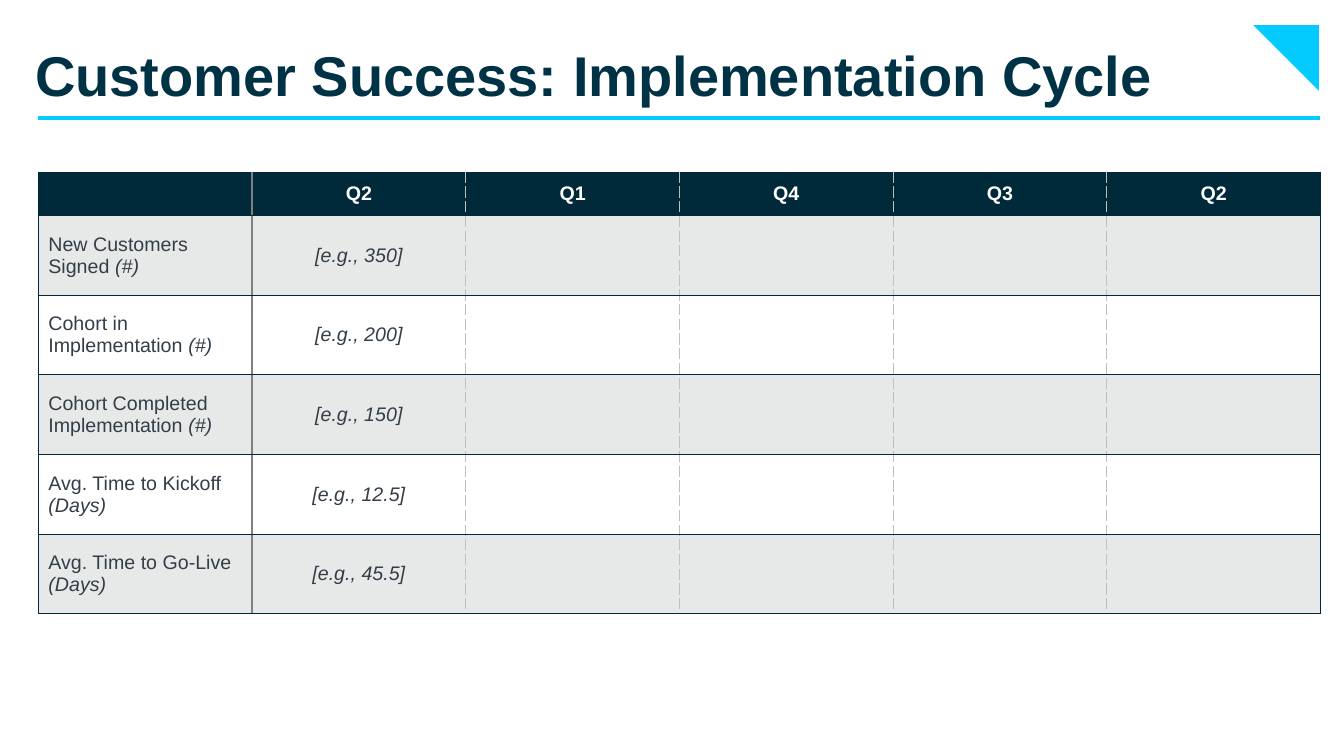
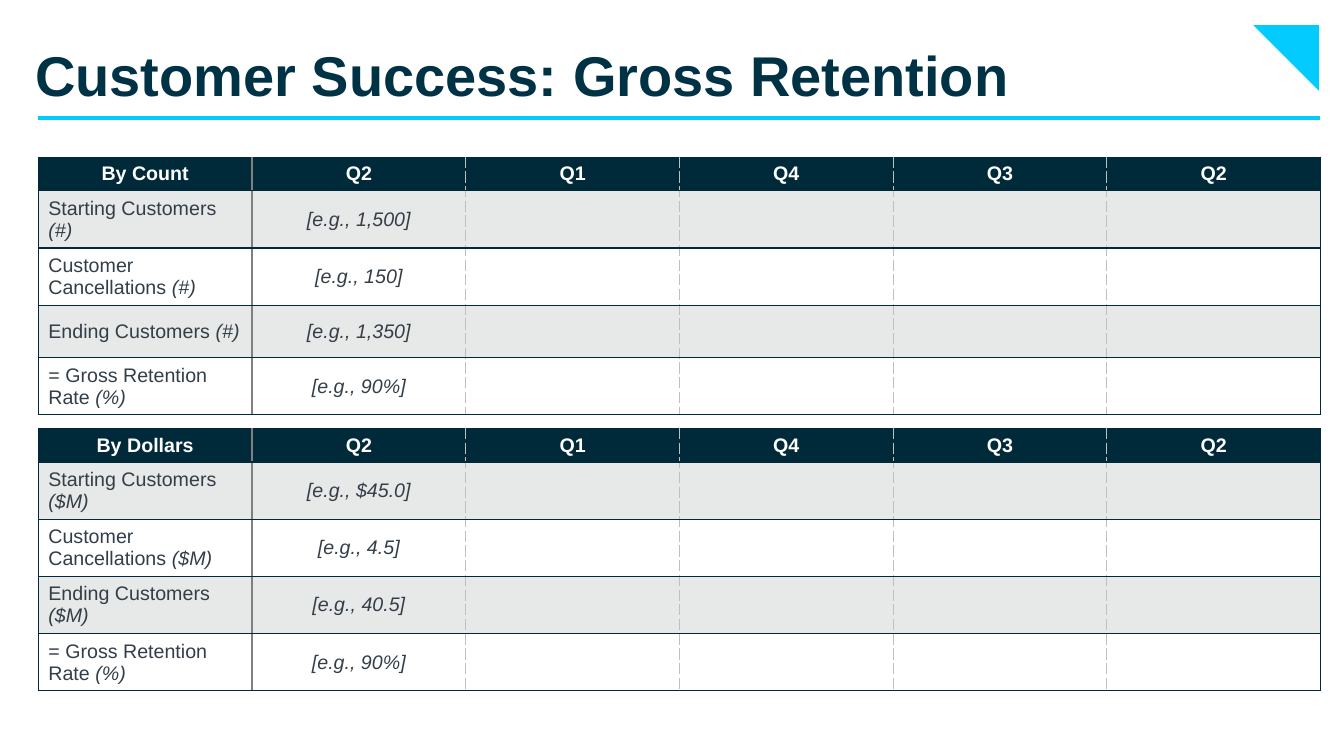
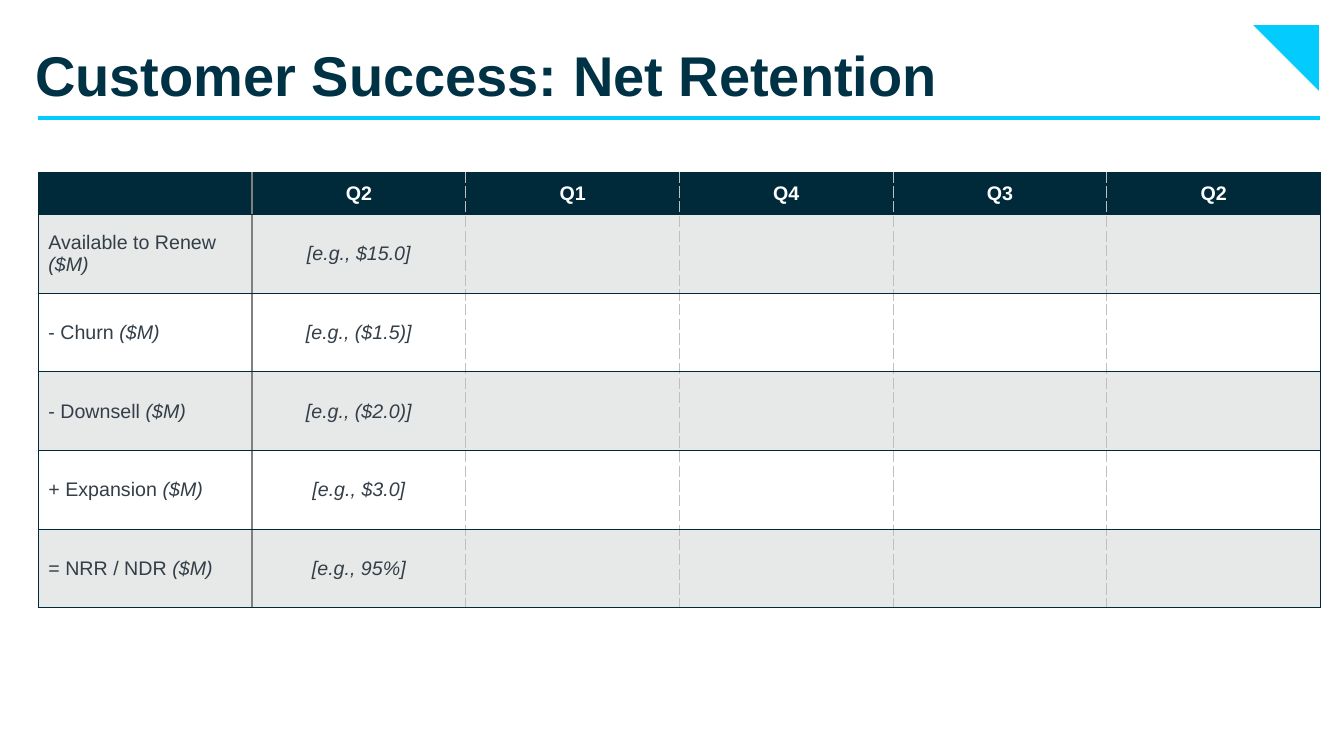
from lxml import etree
from pptx import Presentation
from pptx import util as u
from pptx.dml.color import RGBColor
from pptx.enum import shapes, text
from pptx.oxml import ns

PX = 9144  # 100 px to the inch
FONT = "Arial"
COLORS = {
    "title": "003246",
    "accent": "03CBFD",
    "navy": "002A3A",
    "body": "333E48",
    "white": "FFFFFF",
    "band": "E7E8E8",
    "divider": "808080",
    "dashes": "BFBFBF",
}
LEFT, RIGHT = 38, 1309
COLUMN_WIDTH = 212
QUARTERS = ["Q2", "Q1", "Q4", "Q3", "Q2"]

# Each table: top, header height, row height, corner label, rows (label, unit, example)
SLIDES = [
    ("Customer Success: Implementation Cycle", [
        (171, 43, 79, "", [
            ("New Customers Signed", "(#)", "350"),
            ("Cohort in Implementation", "(#)", "200"),
            ("Cohort Completed Implementation", "(#)", "150"),
            ("Avg. Time to Kickoff", "(Days)", "12.5"),
            ("Avg. Time to Go-Live", "(Days)", "45.5"),
        ]),
    ]),
    ("Customer Success: Gross Retention", [
        (156, 28, 52, "By Count", [
            ("Starting Customers", "(#)", "1,500"),
            ("Customer Cancellations", "(#)", "150"),
            ("Ending Customers", "(#)", "1,350"),
            ("= Gross Retention Rate", "(%)", "90%"),
        ]),
        (425, 28, 52, "By Dollars", [
            ("Starting Customers", "($M)", "$45.0"),
            ("Customer Cancellations", "($M)", "4.5"),
            ("Ending Customers", "($M)", "40.5"),
            ("= Gross Retention Rate", "(%)", "90%"),
        ]),
    ]),
    ("Customer Success: Net Retention", [
        (171, 42, 78, "", [
            ("Available to Renew", "($M)", "$15.0"),
            ("- Churn", "($M)", "($1.5)"),
            ("- Downsell", "($M)", "($2.0)"),
            ("+ Expansion", "($M)", "$3.0"),
            ("= NRR / NDR", "($M)", "95%"),
        ]),
    ]),
]


def style_font(font, size, color, bold=False):
    font.name = FONT
    font.size = u.Pt(size)
    font.bold = bold
    font.color.rgb = RGBColor.from_string(COLORS[color])


def set_borders(cell, left, right):
    """Draw the four cell edges; top and bottom are always navy."""
    properties = cell._tc.get_or_add_tcPr()
    for side, color in (("L", left), ("R", right), ("T", "navy"), ("B", "navy")):
        edge = etree.SubElement(properties, ns.qn("a:ln" + side), w=str(u.Pt(1)))
        fill = etree.SubElement(edge, ns.qn("a:solidFill"))
        etree.SubElement(fill, ns.qn("a:srgbClr"), val=COLORS[color])
        dash = "lgDash" if color == "dashes" else "solid"
        etree.SubElement(edge, ns.qn("a:prstDash"), val=dash)


deck = Presentation()
deck.slide_width, deck.slide_height = 1333 * PX, 750 * PX

# Colours of the vertical edges, from left to right
edges = ["navy", "divider"] + ["dashes"] * (len(QUARTERS) - 1) + ["navy"]

for title, tables in SLIDES:
    page = deck.slides.add_slide(deck.slide_layouts[6])

    # Corner triangle
    corner = page.shapes.add_shape(shapes.MSO_SHAPE.RIGHT_TRIANGLE,
                                   1243 * PX, 25 * PX, 65 * PX, 65 * PX)
    corner.rotation = 180
    corner.shadow.inherit = False
    corner.fill.solid()
    corner.fill.fore_color.rgb = RGBColor.from_string(COLORS["accent"])
    corner.line.fill.background()

    # Title
    box = page.shapes.add_textbox(25 * PX, 25 * PX, 1284 * PX, 118 * PX)
    frame = box.text_frame
    frame.word_wrap = True
    frame.margin_left = frame.margin_right = frame.margin_bottom = 10 * PX
    frame.margin_top = 15 * PX
    frame.text = title
    style_font(frame.paragraphs[0].font, 40, "title", bold=True)

    # Title rule
    rule = page.shapes.add_connector(shapes.MSO_CONNECTOR.STRAIGHT,
                                     LEFT * PX, 117 * PX, RIGHT * PX, 117 * PX)
    rule.line.width = u.Pt(3)
    rule.line.color.rgb = RGBColor.from_string(COLORS["accent"])
    etree.SubElement(rule._element.spPr, ns.qn("a:effectLst"))

    # Tables
    for top, header_height, row_height, corner_label, rows in tables:
        column_count = len(QUARTERS) + 1
        height = header_height + row_height * len(rows)
        table = page.shapes.add_table(
            len(rows) + 1, column_count, LEFT * PX, top * PX,
            COLUMN_WIDTH * column_count * PX, height * PX).table
        table.first_row = table.horz_banding = False
        for column in table.columns:
            column.width = COLUMN_WIDTH * PX

        for r, row in enumerate(table.rows):
            row.height = (row_height if r else header_height) * PX
            fill = "navy" if r == 0 else "band" if r % 2 else "white"
            for c, cell in enumerate(row.cells):
                set_borders(cell, edges[c], edges[c + 1])
                cell.fill.solid()
                cell.fill.fore_color.rgb = RGBColor.from_string(COLORS[fill])
                cell.vertical_anchor = text.MSO_ANCHOR.MIDDLE

                para = cell.text_frame.paragraphs[0]
                style_font(para.font, 14, "body" if r else "white", bold=r == 0)
                if r == 0 or c > 0:
                    para.alignment = text.PP_ALIGN.CENTER
                if r == 0:
                    content = [([corner_label] + QUARTERS)[c]]
                elif c == 0:
                    label, unit, example = rows[r - 1]
                    content = [label + " ", unit]
                elif c == 1:
                    content = [f"[e.g., {example}]"]
                    para.font.italic = True
                else:
                    content = []
                for i, words in enumerate(filter(None, content)):
                    span = para.add_run()
                    span.text = words
                    if i == 1:
                        span.font.italic = True

deck.save("out.pptx")
